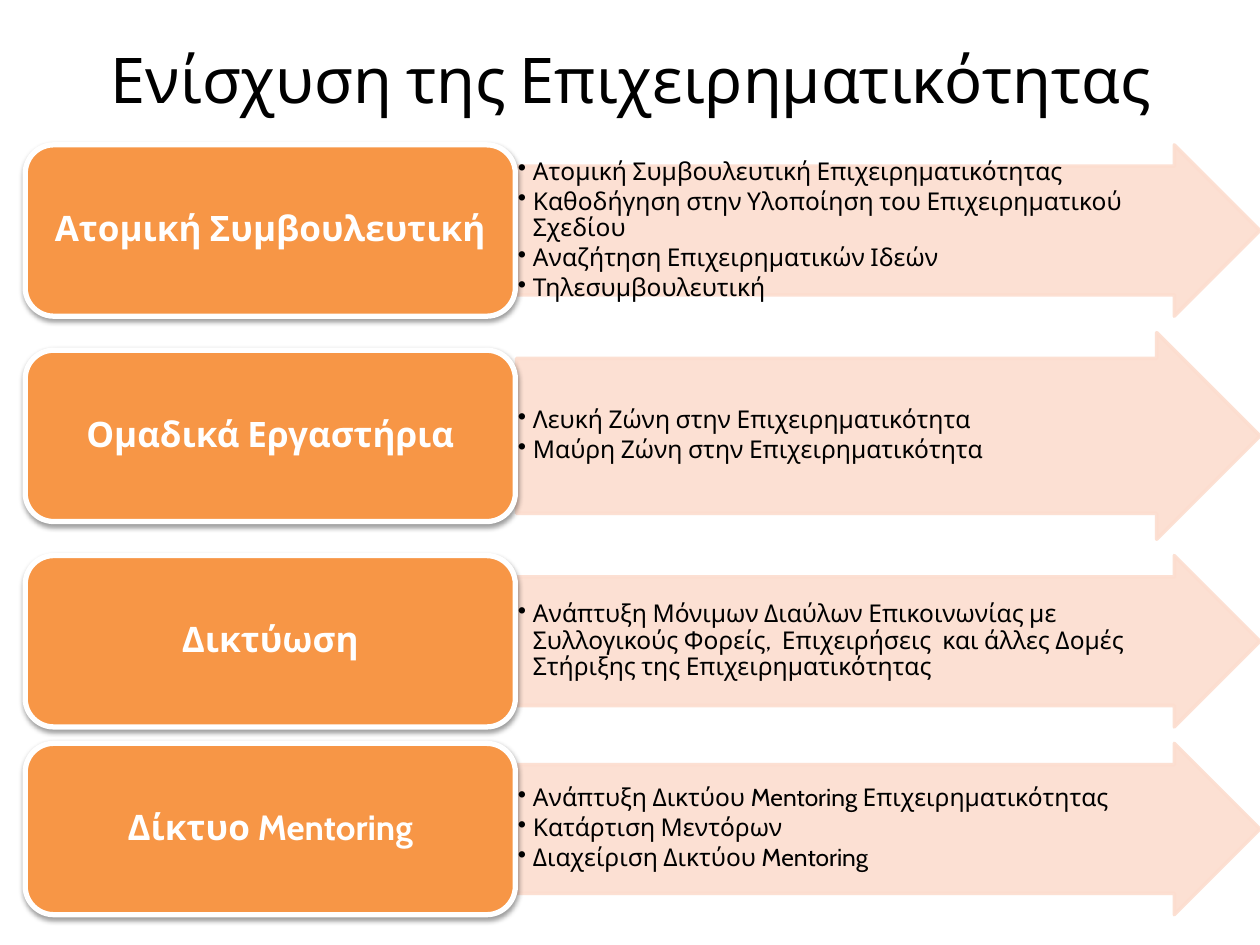
from lxml.etree import SubElement
from pptx import Presentation
from pptx.dml.color import RGBColor
from pptx.enum.shapes import MSO_SHAPE
from pptx.enum.text import MSO_ANCHOR, MSO_AUTO_SIZE, PP_ALIGN
from pptx.oxml.ns import qn
from pptx.util import Inches, Pt

TITLE = "Ενίσχυση της Επιχειρηματικότητας"
ROWS = [
    ("Ατομική Συμβουλευτική", 1.36, [
        "Ατομική Συμβουλευτική Επιχειρηματικότητας",
        "Καθοδήγηση στην Υλοποίηση του Επιχειρηματικού Σχεδίου",
        "Αναζήτηση Επιχειρηματικών Ιδεών",
        "Τηλεσυμβουλευτική"]),
    ("Ομαδικά Εργαστήρια", 1.64, [
        "Λευκή Ζώνη στην Επιχειρηματικότητα",
        "Μαύρη Ζώνη στην Επιχειρηματικότητα"]),
    ("Δικτύωση", 1.36, [
        "Ανάπτυξη Μόνιμων Διαύλων Επικοινωνίας με Συλλογικούς Φορείς,  "
        "Επιχειρήσεις  και άλλες Δομές Στήριξης της Επιχειρηματικότητας"]),
    ("Δίκτυο Mentoring", 1.36, [
        "Ανάπτυξη Δικτύου Mentoring Επιχειρηματικότητας",
        "Κατάρτιση Μεντόρων",
        "Διαχείριση Δικτύου Mentoring"]),
]

BLACK = RGBColor(0, 0, 0)
WHITE = RGBColor(255, 255, 255)
ORANGE = RGBColor(0xF7, 0x96, 0x46)
PEACH = RGBColor(0xFC, 0xDD, 0xCF)

TOP, GAP = 1.15, 0.13
BOX_X, BOX_W, BOX_H = 0.2, 3.89, 1.36
ARROW_X, ARROW_W = 4.1, 5.9

FRAME = {"word_wrap": True, "auto_size": MSO_AUTO_SIZE.NONE,
         "vertical_anchor": MSO_ANCHOR.MIDDLE}
HEAD = {"name": "Cabin", "size": Pt(36)}
LABEL = {"name": "Cabin", "size": Pt(20), "bold": True}
ITEM = {"name": "Cabin", "size": Pt(14), "bold": False}
MID = {"alignment": PP_ALIGN.CENTER}
LABEL_PAR = {**MID, "line_spacing": 0.9}
ITEM_PAR = {"alignment": PP_ALIGN.LEFT, "line_spacing": 0.9,
            "space_after": Pt(2)}


def apply(thing, form):
    for key, val in form.items():
        setattr(thing, key, val)


def write(shape, lines, par, font, color, pad):
    frame = shape.text_frame
    frame.text = "\n".join(lines)
    apply(frame, FRAME)
    side, end = (Inches(n) for n in pad)
    apply(frame, {"margin_left": side, "margin_right": side,
                  "margin_top": end, "margin_bottom": end})
    for para in frame.paragraphs:
        apply(para, par)
        for run in para.runs:
            apply(run.font, font)
            run.font.color.rgb = color


def draw(kind, spot, fill, line, width):
    shape = slide.shapes.add_shape(kind, *(Inches(n) for n in spot))
    shape.shadow.inherit = False
    shape.fill.solid()
    shape.fill.fore_color.rgb = fill
    shape.line.color.rgb = line
    shape.line.width = Pt(width)
    return shape


def add_arrow(top, high, items):
    arrow = draw(MSO_SHAPE.RIGHT_ARROW, (ARROW_X, top, ARROW_W, high),
                 PEACH, PEACH, 2)
    arrow.adjustments[0] = 0.75
    arrow.adjustments[1] = 0.5
    for color in arrow._element.spPr.iter(qn("a:srgbClr")):
        SubElement(color, qn("a:alpha"), val="90000")
    write(arrow, items, ITEM_PAR, ITEM, BLACK, (0.01, 0.01))
    for para in arrow.text_frame.paragraphs:
        props = para._p.get_or_add_pPr()
        props.set("marL", str(Inches(0.12)))
        props.set("indent", str(Inches(-0.12)))
        SubElement(props, qn("a:buChar"), char="•")


def add_box(top, label):
    box = draw(MSO_SHAPE.ROUNDED_RECTANGLE, (BOX_X, top, BOX_W, BOX_H),
               ORANGE, WHITE, 3)
    shade = SubElement(box._element.spPr.find(qn("a:effectLst")),
                       qn("a:outerShdw"), blurRad=str(Pt(3.1)),
                       dist=str(Pt(1.6)), dir="5400000", rotWithShape="0")
    color = SubElement(shade, qn("a:srgbClr"), val=str(BLACK))
    SubElement(color, qn("a:alpha"), val="38000")
    write(box, [label], LABEL_PAR, LABEL, WHITE, (0.08, 0.04))


deck = Presentation()
deck.slide_width, deck.slide_height = Inches(10), Inches(7.5)
slide = deck.slides.add_slide(deck.slide_layouts[5])

title = slide.shapes.title
apply(title, {"left": Inches(0.51), "top": Inches(0),
              "width": Inches(9), "height": Inches(1.25)})
write(title, [TITLE], MID, HEAD, BLACK, (0.1, 0.05))

top = TOP
for label, high, items in ROWS:
    add_arrow(top, high, items)
    add_box(top + (high - BOX_H) / 2, label)
    top += high + GAP

deck.save("out.pptx")
